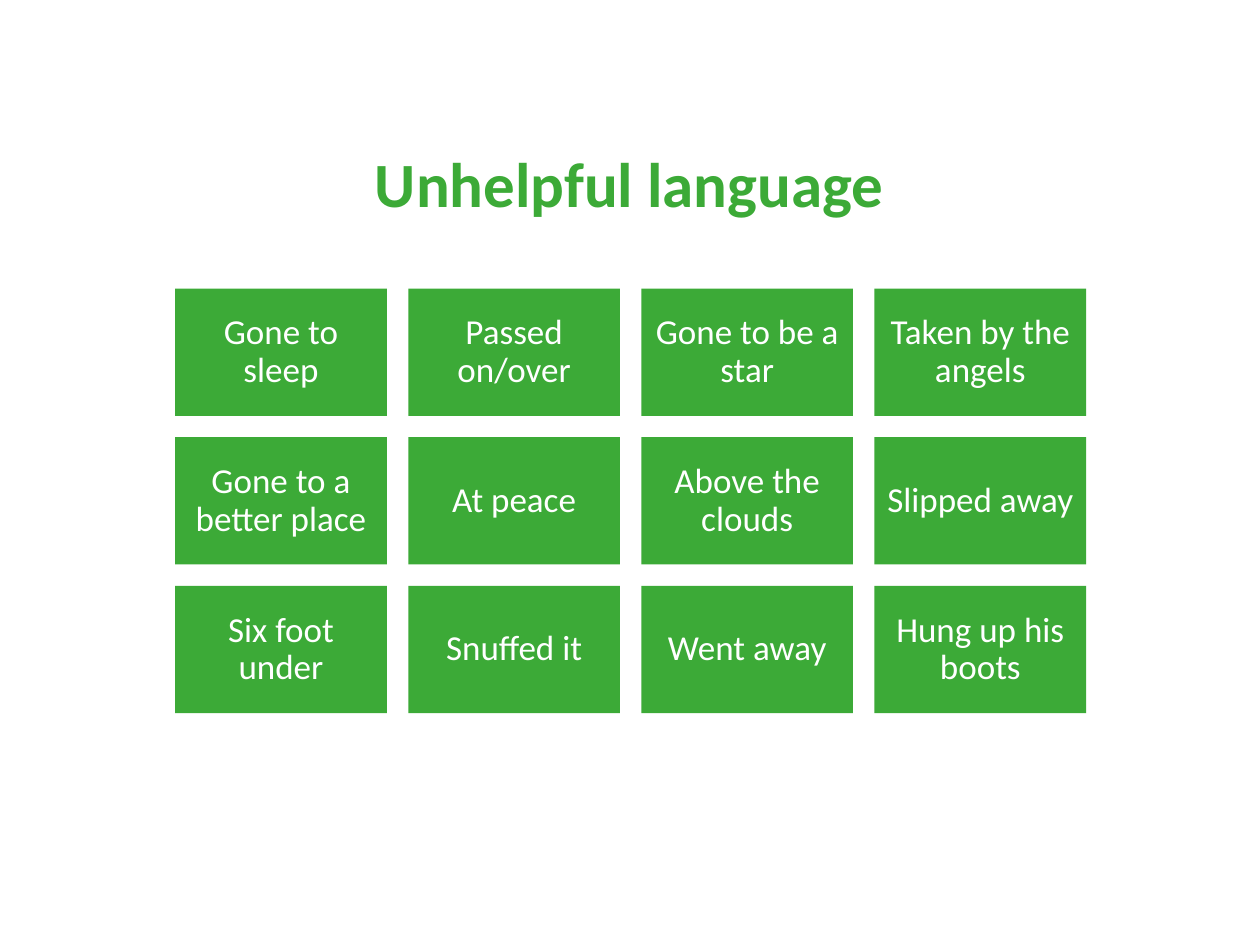
import pptx
import pptx.util
import pptx.dml.color
import pptx.enum.shapes
import pptx.enum.text

Inches = pptx.util.Inches
Pt = pptx.util.Pt

COLORS = {"green": "3CAA37", "white": "FFFFFF"}
FONT = "Calibri"

PHRASES = [
    ["Gone to sleep", "Passed on/over", "Gone to be a star", "Taken by the angels"],
    ["Gone to a better place", "At peace", "Above the clouds", "Slipped away"],
    ["Six foot under", "Snuffed it", "Went away", "Hung up his boots"],
]
GRID_LEFT, GRID_TOP = 1.39, 2.29
TILE_W, TILE_H = 1.68, 1.01
GAP = 0.17


def rgb(name):
    return pptx.dml.color.RGBColor.from_string(COLORS[name])


class SlideBuilder:
    def __init__(self, prs):
        self.s = prs.slides.add_slide(prs.slide_layouts.get_by_name("Title Only"))

    def set_text(self, tf, text, size, color, bold=False):
        """Fill a text frame with one centred paragraph."""
        tf.word_wrap = True
        tf.auto_size = pptx.enum.text.MSO_AUTO_SIZE.NONE
        tf.vertical_anchor = pptx.enum.text.MSO_ANCHOR.MIDDLE
        tf.text = text
        p = tf.paragraphs[0]
        p.alignment = pptx.enum.text.PP_ALIGN.CENTER
        p.line_spacing = 0.9
        p.font.name = FONT
        p.font.size = Pt(size)
        p.font.bold = bold
        p.font.color.rgb = rgb(color)

    def title(self, text, left, top, width, height):
        sp = self.s.shapes.title
        sp.left, sp.top = Inches(left), Inches(top)
        sp.width, sp.height = Inches(width), Inches(height)
        self.set_text(sp.text_frame, text, 36, "green", bold=True)

    def tile(self, text, left, top):
        sp = self.s.shapes.add_shape(
            pptx.enum.shapes.MSO_SHAPE.RECTANGLE,
            Inches(left), Inches(top), Inches(TILE_W), Inches(TILE_H))
        sp.shadow.inherit = False
        sp.fill.solid()
        sp.fill.fore_color.rgb = rgb("green")
        sp.line.fill.background()
        tf = sp.text_frame
        tf.margin_left = tf.margin_right = Inches(0.08)
        tf.margin_top = tf.margin_bottom = Inches(0.08)
        self.set_text(tf, text, 20, "white")


def main():
    prs = pptx.Presentation()
    prs.slide_width, prs.slide_height = Inches(10), Inches(7.5)
    slide = SlideBuilder(prs)
    slide.title("Unhelpful language", 1.04, 0.94, 7.91, 1.09)
    for row, phrases in enumerate(PHRASES):
        for col, phrase in enumerate(phrases):
            slide.tile(phrase,
                       GRID_LEFT + col * (TILE_W + GAP),
                       GRID_TOP + row * (TILE_H + GAP))
    prs.save("out.pptx")


if __name__ == "__main__":
    main()
